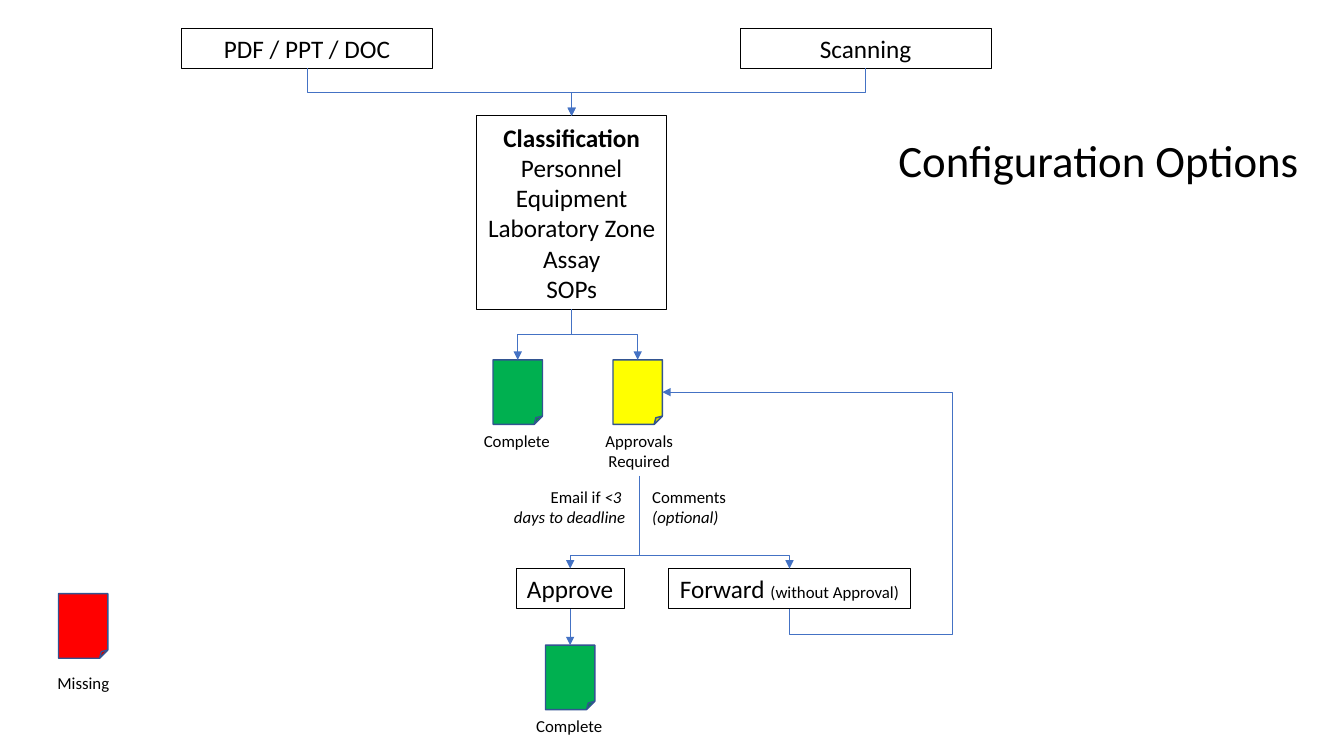
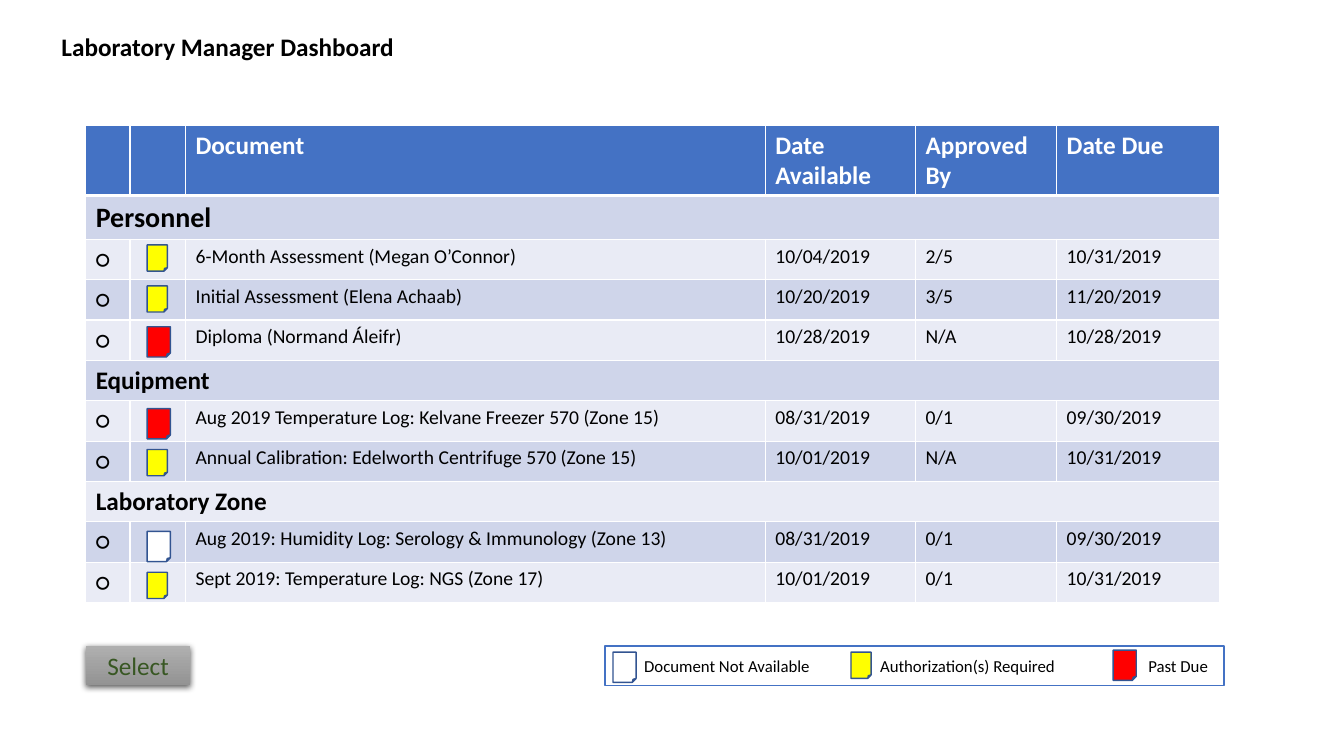
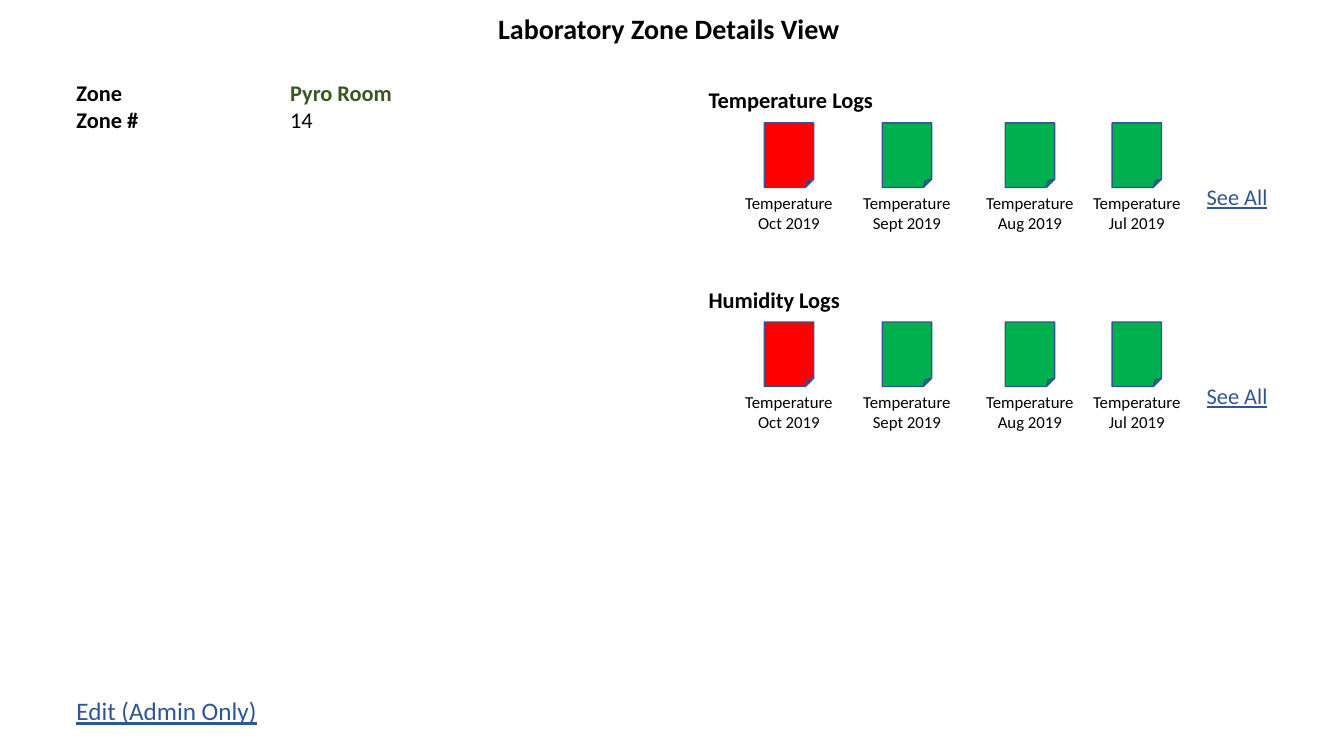
"""Build three slides on laboratory document control."""
from lxml.etree import SubElement
from pptx import Presentation
from pptx.dml.color import RGBColor as Rgb
from pptx.enum.shapes import MSO_CONNECTOR as Wire, MSO_SHAPE as Form
from pptx.enum.text import MSO_ANCHOR as Anchor, MSO_AUTO_SIZE as Fit, PP_ALIGN as Align
from pptx.oxml.ns import qn
from pptx.util import Inches, Pt

BLACK, WHITE, BLUE, EDGE = "000000", "FFFFFF", "4472C4", "325491"
RED, YELLOW, GREEN = "FF0000", "FFFF00", "00B050"
MOSS, LINK = "385723", "2F5597"
BANDS = "E9EBF5", "CFD5EA"
TOP, LEFT, BOTTOM, RIGHT = range(4)
MID = Align.CENTER


def cells(*counts):
    """Turn counts of tenth-inch grid columns or rows into lengths."""
    return [Inches(n / 10) for n in counts]


def tint(code):
    """Turn a hex string into a colour."""
    return Rgb.from_string(code)


class Deck:
    """Hold the style and the current slide, and draw each kind of element."""

    def __init__(self):
        """Start an empty wide deck."""
        self.show = Presentation()
        self.show.slide_width, self.show.slide_height = Inches(13.33), Inches(7.5)
        self.slide = None

    def page(self, title, at, size, bold=True):
        """Add a slide and set its title."""
        self.slide = self.show.slides.add_slide(self.show.slide_layouts[5])
        head = self.slide.shapes.title
        head.left, head.top, head.width, head.height = cells(*at)
        head.text_frame.vertical_anchor = Anchor.TOP
        self.put(head.text_frame, [title], size, bold=bold)

    def put(self, frame, lines, size, color=BLACK, bold=False, align=Align.LEFT,
            tabs=(), wrap=False, line=None):
        """Fill a frame; a line is a string or a list of (text, style) runs."""
        frame.word_wrap = wrap
        frame.auto_size = Fit.NONE
        for i, item in enumerate(lines):
            para = frame.add_paragraph() if i else frame.paragraphs[0]
            para.alignment = align
            font = para.font
            font.name, font.size, font.bold = "Calibri", Pt(size), bold
            font.color.rgb = tint(color)
            font.underline = line
            for text, style in [(item, {})] if isinstance(item, str) else item:
                run = para.add_run()
                run.text = text
                for name, value in style.items():
                    if name == "color":
                        run.font.color.rgb = tint(value)
                    else:
                        setattr(run.font, name, value)
            if tabs:
                props = para._p.get_or_add_pPr()
                stops = props.makeelement(qn("a:tabLst"))
                props.insert(0, stops)
                for stop in cells(*tabs):
                    SubElement(stops, qn("a:tab"), pos=str(stop), algn="l")

    def text(self, at, lines, size=12, **style):
        """Add a text box."""
        box = self.slide.shapes.add_textbox(*cells(*at))
        self.put(box.text_frame, lines, size, **style)
        box.text_frame.auto_size = Fit.SHAPE_TO_FIT_TEXT
        return box

    def shape(self, form, at, fill=None, edge=None, width=1):
        """Add a flat preset shape."""
        item = self.slide.shapes.add_shape(form, *cells(*at))
        item.shadow.inherit = False
        if fill:
            item.fill.solid()
            item.fill.fore_color.rgb = tint(fill)
        else:
            item.fill.background()
        if edge:
            item.line.color.rgb = tint(edge)
            item.line.width = Pt(width)
        else:
            item.line.fill.background()
        return item

    def box(self, at, lines):
        """Add a framed box of centred text."""
        item = self.shape(Form.RECTANGLE, at, edge=BLACK, width=0.75)
        self.put(item.text_frame, lines, 18, align=MID)
        return item

    def doc(self, x, y, fill, w=4.9, h=6.4):
        """Add a document icon."""
        return self.shape(Form.FOLDED_CORNER, (x, y, w, h), fill, EDGE)

    def mark(self, x, y, fill):
        """Add a small status icon."""
        w, h = (2, 2.6) if fill == YELLOW else (2.3, 3)
        return self.doc(x, y, fill, w, h)

    def arrow(self, start, end, bends=(0.5,), side=TOP):
        """Join the foot of one shape to a side of another."""
        kind = Wire.ELBOW if bends else Wire.STRAIGHT
        link = self.slide.shapes.add_connector(kind, 0, 0, 0, 0)
        link.begin_connect(start, BOTTOM)
        link.end_connect(end, side)
        link.line.color.rgb = tint(BLUE)
        link.line.width = Pt(0.5)
        props = link.element.spPr
        SubElement(props.find(qn("a:ln")), qn("a:tailEnd"), type="triangle")
        SubElement(props, qn("a:effectLst"))
        if bends:
            self.bend(link, props, bends)

    def bend(self, link, props, bends):
        """Turn an elbow so that it leaves its start vertically."""
        x, y = link.begin_x, link.begin_y
        dx, dy = link.end_x - x, link.end_y - y
        w, h = abs(dy), abs(dx)
        link.left, link.top = x + (dx - w) // 2, y + (dy - h) // 2
        link.width, link.height = w, h
        turn = props.find(qn("a:xfrm"))
        turn.set("rot", str((90 if dx < 0 else 270) * 60000))
        turn.set("flipH", str(int(dx > 0 or dy < 0)))
        turn.set("flipV", "0")
        form = props.find(qn("a:prstGeom"))
        form.set("prst", f"bentConnector{len(bends) + 2}")
        knobs = form.find(qn("a:avLst"))
        if knobs is None:
            knobs = SubElement(form, qn("a:avLst"))
        for i, bend in enumerate(bends, 1):
            SubElement(knobs, qn("a:gd"), name=f"adj{i}", fmla=f"val {round(bend * 100000)}")

    def button(self, at, label):
        """Add a shaded button."""
        item = self.shape(Form.RECTANGLE, at)
        item.fill.gradient()
        item.fill.gradient_angle = 270
        for stop, code in zip(item.fill.gradient_stops, ("AFAFAF", "939393")):
            stop.color.rgb = tint(code)
        glow = SubElement(item.element.spPr.find(qn("a:effectLst")), qn("a:outerShdw"),
                          blurRad=str(Pt(4.5)), dist=str(Pt(1.5)), dir="5400000",
                          algn="ctr", rotWithShape="0")
        shade = SubElement(glow, qn("a:srgbClr"), val=BLACK)
        SubElement(shade, qn("a:alpha"), val="63000")
        self.put(item.text_frame, [label], 18, MOSS, align=MID)

    def cell(self, cell, text, fill, size, color=BLACK, bold=False, foot=1):
        """Fill one table cell and rule its sides."""
        if text:
            self.put(cell.text_frame, [text], size, color, bold, wrap=True)
        props = cell._tc.get_or_add_tcPr()
        for side, width in zip("LRTB", (1, 1, 1, foot)):
            rule = SubElement(props, qn(f"a:ln{side}"), w=str(Pt(width)))
            SubElement(SubElement(rule, qn("a:solidFill")), qn("a:srgbClr"), val=WHITE)
        cell.fill.solid()
        cell.fill.fore_color.rgb = tint(fill)

    def table(self, at, widths, head, rows):
        """Add a banded table; a row with one text spans all columns."""
        grid = self.slide.shapes.add_table(len(rows) + 1, len(widths), *cells(*at)).table
        for col, width in zip(grid.columns, cells(*widths)):
            col.width = width
        for i, row in enumerate(grid.rows):
            row.height = cells(4 if i else 7)[0]
        for j, text in enumerate(head):
            self.cell(grid.cell(0, j), text, BLUE, 18, WHITE, True, 3)
        for i, row in enumerate(rows, 1):
            group = len(row) == 1
            if group:
                grid.cell(i, 0).merge(grid.cell(i, len(widths) - 1))
            for j, text in enumerate(row):
                size = 20 if i == 1 else 14 if j else 18
                self.cell(grid.cell(i, j), text, BANDS[i % 2], size, bold=group)


def flow(deck):
    """Draw the flow of documents."""
    deck.page("Configuration Options", (88.1, 12.7, 42.2, 6.4), 32, False)
    files = deck.box((18, 2.8, 24.9, 4), ["PDF / PPT / DOC"])
    scan = deck.box((73.4, 2.8, 24.9, 4), ["Scanning"])
    sort = deck.box((47.3, 11.5, 18.8, 19.2), [
        [("Classification", {"bold": True})], "Personnel", "Equipment",
        "Laboratory Zone", "Assay", "SOPs"])
    deck.doc(5.8, 58.9, RED)
    done = deck.doc(48.9, 35.7, GREEN)
    wait = deck.doc(60.8, 35.7, YELLOW)
    last = deck.doc(54.1, 64, GREEN)
    deck.text((4.7, 66.2, 7.2, 3), ["Missing"])
    for x, y in (47, 42.2), (52.2, 70.5):
        deck.text((x, y, 8.6, 3), ["Complete"])
    need = deck.text((59, 42.2, 8.8, 5), ["Approvals", "Required"], align=MID)
    slant = {"italic": True}
    deck.text((63.7, 47.8, 9.8, 5), ["Comments", [("(optional)", slant)]])
    deck.text((49.9, 47.8, 13.1, 5),
              [[("Email if ", {}), ("<3 ", slant)], [("days to deadline", slant)]],
              align=Align.RIGHT)
    yes = deck.box((51.2, 56.4, 10.7, 4), ["Approve"])
    send = deck.box((66.3, 56.4, 24, 4),
                    [[("Forward ", {}), ("(without Approval)", {"size": Pt(12)})]])
    for start, end in (scan, sort), (files, sort), (sort, wait), (sort, done):
        deck.arrow(start, end)
    for end in yes, send:
        deck.arrow(need, end, (0.86,))
    deck.arrow(yes, last, ())
    deck.arrow(send, wait, (-0.12, -1.28), RIGHT)


def board(deck):
    """Draw the dashboard of due documents."""
    deck.page("Laboratory Manager Dashboard", (5.1, 2.6, 35.3, 4), 18)
    deck.shape(Form.RECTANGLE, (60, 64.1, 61.4, 3.9), WHITE, BLUE)
    deck.text((62.9, 64.6, 58.5, 3),
              ["Document Not Available\tAuthorization(s) Required\tPast Due"],
              tabs=(23.4, 50), wrap=True)
    for x, y, fill in (60.8, 64.7, WHITE), (84.4, 64.7, YELLOW), (110.4, 64.5, RED):
        deck.mark(x, y, fill)
    items = [
        ("Personnel",),
        (YELLOW, "6-Month Assessment (Megan O’Connor)", "10/04/2019", "2/5", "10/31/2019"),
        (YELLOW, "Initial Assessment (Elena Achaab)", "10/20/2019", "3/5", "11/20/2019"),
        (RED, "Diploma (Normand Áleifr)", "10/28/2019", "N/A", "10/28/2019"),
        ("Equipment",),
        (RED, "Aug 2019 Temperature Log: Kelvane Freezer 570 (Zone 15)",
         "08/31/2019", "0/1", "09/30/2019"),
        (YELLOW, "Annual Calibration: Edelworth Centrifuge 570 (Zone 15)",
         "10/01/2019", "N/A", "10/31/2019"),
        ("Laboratory Zone",),
        (WHITE, "Aug 2019: Humidity Log: Serology & Immunology (Zone 13)",
         "08/31/2019", "0/1", "09/30/2019"),
        (YELLOW, "Sept 2019: Temperature Log: NGS (Zone 17)",
         "10/01/2019", "0/1", "10/31/2019"),
    ]
    rows = [row if len(row) == 1 else ("○", "", *row[1:]) for row in items]
    deck.table((8.5, 12.4, 112.5, 47), (4.4, 5.5, 57.5, 14.9, 14, 16.2),
               ("", "", "Document", "Date Available", "Approved By", "Date Due"), rows)
    for i, row in enumerate(items):
        if len(row) > 1:
            deck.mark(14.6, 20.24 + 4.06 * i, row[0])
    deck.button((8.5, 64.1, 10.4, 3.9), "Select")


def zone(deck):
    """Draw the details of one zone."""
    deck.page("Laboratory Zone Details View", (48.4, 0.6, 36.1, 4.4), 20)
    deck.text((6.6, 7.4, 33.7, 10.9),
              [[("Zone\t", {}), ("Pyro Room", {"color": MOSS})],
               [("Zone #\t", {}), ("14", {"bold": False})]],
              16, bold=True, tabs=(21.2,), wrap=True)
    deck.text((6.6, 68.5, 20.1, 4), ["Edit (Admin Only)"], 18, color=LINK, line=True)
    months = ("Oct", 75.8, RED), ("Sept", 87.5, GREEN), ("Aug", 99.7, GREEN), ("Jul", 110.3, GREEN)
    for name, y, w in ("Temperature", 8.1, 18.6), ("Humidity", 27.85, 15.2):
        deck.text((69.3, y, w, 3.7), [f"{name} Logs"], 16, bold=True)
        for month, x, fill in months:
            deck.doc(x, y + 4.1, fill)
            deck.text((x - 2.95, y + 10.5, 10.8, 5), ["Temperature", f"{month} 2019"], align=MID)
        deck.text((118.7, y + 9.6, 8.1, 3.7), ["See All"], 16, color=LINK, line=True)


def main():
    """Build and save the deck."""
    deck = Deck()
    for draw in flow, board, zone:
        draw(deck)
    deck.show.save("out.pptx")


if __name__ == "__main__":
    main()
